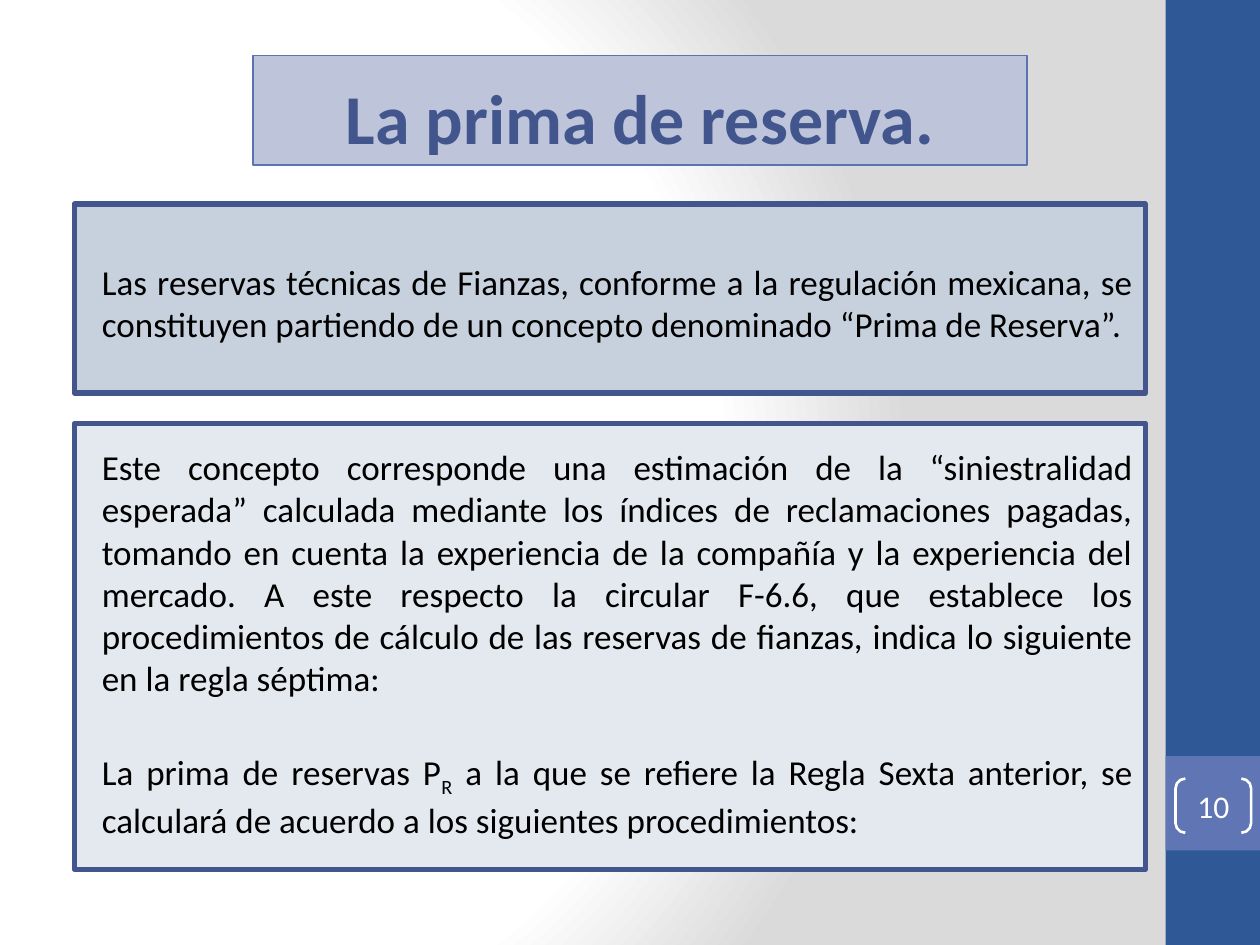
from lxml import etree
from pptx import Presentation
from pptx.dml.color import RGBColor
from pptx.enum.shapes import MSO_SHAPE as Shape
from pptx.enum.text import MSO_ANCHOR as Anchor, MSO_AUTO_SIZE as AutoSize, PP_ALIGN as Align
from pptx.oxml import parse_xml
from pptx.oxml.ns import nsdecls, qn
from pptx.util import Inches, Pt

WHITE = RGBColor(0xFF, 0xFF, 0xFF)
BLACK = RGBColor(0x00, 0x00, 0x00)
GREY = RGBColor(0xDA, 0xDA, 0xDA)
NAVY = RGBColor(0x2F, 0x58, 0x97)
TAB_BLUE = RGBColor(0x60, 0x76, 0xB4)
INDIGO = RGBColor(0x42, 0x56, 0x8D)
TITLE_EDGE = RGBColor(0x5C, 0x72, 0xB2)
TITLE_FILL = RGBColor(0xBE, 0xC4, 0xDA)
INTRO_FILL = RGBColor(0xC7, 0xD1, 0xDE)
DETAIL_FILL = RGBColor(0xE4, 0xE9, 0xEF)

TITLE = "La prima de reserva."
PAGE_NUMBER = "10"
# Each paragraph is a list of (text, is_subscript) runs.
INTRO = [
    [("Las reservas técnicas de Fianzas, conforme a la regulación mexicana, se "
      "constituyen partiendo de un concepto denominado “Prima de Reserva”.", False)],
]
DETAIL = [
    [("Este concepto corresponde una estimación de la “siniestralidad esperada” "
      "calculada mediante los índices de reclamaciones pagadas, tomando en cuenta "
      "la experiencia de la compañía y la experiencia del mercado. A este respecto "
      "la circular F-6.6, que establece los procedimientos de cálculo de las "
      "reservas de fianzas, indica lo siguiente en la regla séptima:", False)],
    [("La prima de reservas P", False), ("R", True),
     (" a la que se refiere la Regla Sexta anterior, se calculará de acuerdo a los "
      "siguientes procedimientos:", False)],
]

SLIDE_W, SLIDE_H = 10, 7.5
BAND_W = 0.75
BAND_X = SLIDE_W - BAND_W
TAB_Y = SLIDE_H - 2 * BAND_W
PANEL_X, PANEL_W = 0.59, 8.5
# top, height, fill, space above the text, paragraphs
PANELS = [
    (3.36, 3.54, DETAIL_FILL, 0.18, DETAIL),
    (1.62, 1.5, INTRO_FILL, 0.45, INTRO),
]


def paint(shape, fill=None, edge=None, edge_width=1):
    shape.shadow.inherit = False
    if fill is None:
        shape.fill.background()
    else:
        shape.fill.solid()
        shape.fill.fore_color.rgb = fill
    if edge is None:
        shape.line.fill.background()
    else:
        shape.line.color.rgb = edge
        shape.line.width = Pt(edge_width)


def add_box(slide, kind, left, top, width, height, **look):
    box = slide.shapes.add_shape(kind, *map(Inches, (left, top, width, height)))
    paint(box, **look)
    return box


def set_format(target, values):
    for name, value in values.items():
        setattr(target, name, value)


def add_run(paragraph, text, size, color, bold=False):
    run = paragraph.add_run()
    run.text = text
    set_format(run.font, {"name": "Calibri", "size": Pt(size), "bold": bold})
    run.font.color.rgb = color
    return run


def set_background(slide):
    """Radial gradient that stays white for three quarters and then turns grey."""
    slide.background.fill.gradient()
    old = slide.background._cSld.find(".//" + qn("a:gradFill"))
    gradient = parse_xml(
        f'<a:gradFill {nsdecls("a")} rotWithShape="1"><a:gsLst/><a:path path="circle">'
        '<a:fillToRect l="20000" t="50000" r="100000" b="50000"/></a:path></a:gradFill>')
    for share, color in ((0, WHITE), (75, WHITE), (100, GREY)):
        stop = etree.SubElement(gradient[0], qn("a:gs"), pos=str(share * 1000))
        etree.SubElement(stop, qn("a:srgbClr"), val=str(color))
    old.getparent().replace(old, gradient)


def add_title(slide):
    title = slide.shapes.title
    set_format(title, {"left": Inches(2.01), "top": Inches(0.44),
                       "width": Inches(6.14), "height": Inches(0.87)})
    paint(title, TITLE_FILL, TITLE_EDGE)
    set_format(title.text_frame, {"vertical_anchor": Anchor.BOTTOM, "word_wrap": True,
                                  "auto_size": AutoSize.NONE})
    heading = title.text_frame.paragraphs[0]
    set_format(heading, {"alignment": Align.CENTER, "line_spacing": Pt(58)})
    add_run(heading, TITLE, 40, INDIGO, bold=True)


def add_panel(slide, top, height, fill, text_gap, paragraphs):
    panel = add_box(slide, Shape.RECTANGLE, PANEL_X, top, PANEL_W, height,
                    fill=fill, edge=INDIGO, edge_width=3)
    frame = panel.text_frame
    set_format(frame, {"vertical_anchor": Anchor.TOP, "word_wrap": True,
                       "margin_top": Inches(text_gap)})
    for index, runs in enumerate(paragraphs):
        paragraph = frame.add_paragraph() if index else frame.paragraphs[0]
        set_format(paragraph, {"alignment": Align.JUSTIFY,
                               "space_before": Pt(30 if index else 0)})
        paragraph._p.get_or_add_pPr().set("marL", str(Inches(0.12)))
        for text, is_subscript in runs:
            run = add_run(paragraph, text, 20, BLACK)
            if is_subscript:
                run._r.get_or_add_rPr().set("baseline", "-25000")


def add_page_number(slide):
    bracket = add_box(slide, Shape.DOUBLE_BRACKET, 9.33, 6.18, 0.6, 0.43,
                      edge=WHITE, edge_width=1.5)
    bracket.adjustments[0] = 0.18
    frame = bracket.text_frame
    set_format(frame, {"vertical_anchor": Anchor.MIDDLE, "margin_left": 0,
                       "margin_right": 0, "margin_top": 0, "margin_bottom": 0})
    frame.paragraphs[0].alignment = Align.CENTER
    add_run(frame.paragraphs[0], PAGE_NUMBER, 18, WHITE)


def main():
    deck = Presentation()
    deck.slide_width, deck.slide_height = Inches(SLIDE_W), Inches(SLIDE_H)
    slide = deck.slides.add_slide(deck.slide_layouts[5])
    set_background(slide)
    add_title(slide)
    add_box(slide, Shape.RECTANGLE, BAND_X, 0, BAND_W, SLIDE_H, fill=NAVY)
    add_box(slide, Shape.RECTANGLE, BAND_X, TAB_Y, BAND_W, BAND_W, fill=TAB_BLUE)
    for panel in PANELS:
        add_panel(slide, *panel)
    add_page_number(slide)
    deck.save("out.pptx")


if __name__ == "__main__":
    main()
